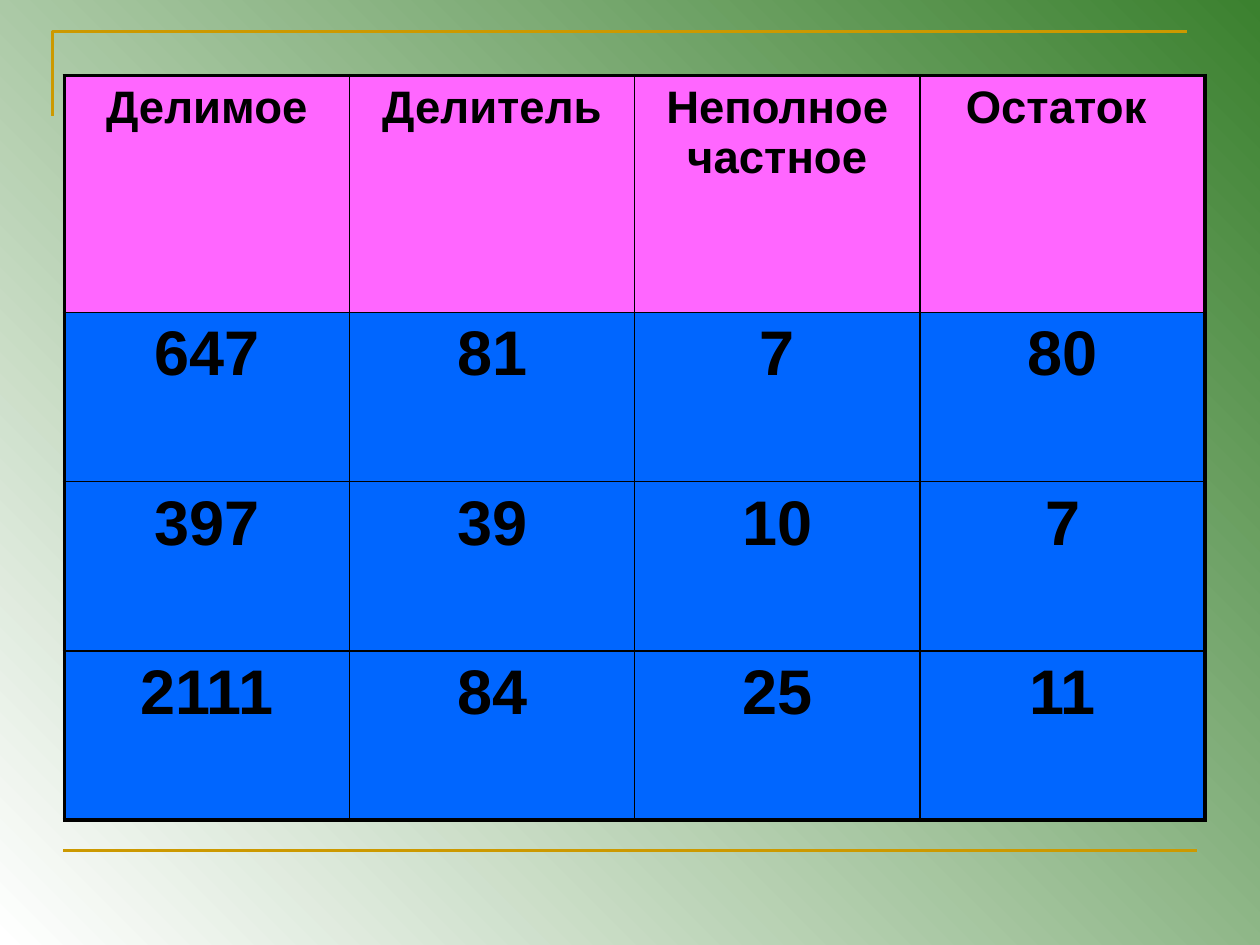
import pptx
import pptx.dml.color
import pptx.enum.shapes
import pptx.enum.text
import pptx.oxml
import pptx.oxml.ns
import pptx.util

Pt = pptx.util.Pt
RGB = pptx.dml.color.RGBColor.from_string

# Content
HEADERS = ["Делимое", "Делитель", "Неполное частное", "Остаток "]
ROWS = [
    ["647", "81", "7", "80"],
    ["397", "39", "10", "7"],
    ["2111", "84", "25", "11"],
]

THEME = {
    "font": "Arial", "text": "000000",
    "header_size": 26, "body_size": 36,
    "header_fill": "FF66FF", "body_fill": "0066FF",
    "border": "000000", "outer": 2.25, "inner": 1,
    "accent": "CC9900", "accent_width": 1.5,
    "background": ("FFFFFF", "3B812F"),
}

# Layout in points
SLIDE_W, SLIDE_H = 720, 540
TABLE_X, TABLE_Y = 36.7, 43.2
COL_W, HEADER_H, BODY_H = 163, 135.4, 96.7
CORNER = [(30.2, 66.2), (30.2, 18), (678.2, 18)]
RULE_X, RULE_W, RULE_Y = 36, 648, 486


def style_line(sp):
    sp.line.color.rgb = RGB(THEME["accent"])
    sp.line.width = Pt(THEME["accent_width"])


def add_borders(cell, widths):
    tc_pr = cell._tc.get_or_add_tcPr()
    for side, width in widths.items():
        tc_pr.append(pptx.oxml.parse_xml(
            f'<a:ln{side} {pptx.oxml.ns.nsdecls("a")} w="{int(Pt(width))}">'
            f'<a:solidFill><a:srgbClr val="{THEME["border"]}"/></a:solidFill>'
            f'</a:ln{side}>'))


def fill_cell(cell, text, size, fill):
    cell.fill.solid()
    cell.fill.fore_color.rgb = RGB(fill)
    cell.text = text
    p = cell.text_frame.paragraphs[0]
    p.alignment = pptx.enum.text.PP_ALIGN.CENTER
    p.font.name = THEME["font"]
    p.font.size = Pt(size)
    p.font.bold = True
    p.font.color.rgb = RGB(THEME["text"])


prs = pptx.Presentation()
prs.slide_width, prs.slide_height = Pt(SLIDE_W), Pt(SLIDE_H)
s = prs.slides.add_slide(prs.slide_layouts[6])

# Background gradient, bottom left to top right
bg = s.background.fill
bg.gradient()
bg.gradient_angle = 45
for i, (stop, color) in enumerate(zip(bg.gradient_stops, THEME["background"])):
    stop.color.rgb = RGB(color)
    stop.position = i

# Corner line at the top
builder = s.shapes.build_freeform(Pt(CORNER[0][0]), Pt(CORNER[0][1]))
builder.add_line_segments([(Pt(x), Pt(y)) for x, y in CORNER[1:]], close=False)
sp = builder.convert_to_shape()
sp.shadow.inherit = False
sp.fill.background()
style_line(sp)

# Rule at the bottom
sp = s.shapes.add_connector(
    pptx.enum.shapes.MSO_CONNECTOR.STRAIGHT,
    Pt(RULE_X), Pt(RULE_Y), Pt(RULE_X + RULE_W), Pt(RULE_Y))
sp._element.spPr.append(
    pptx.oxml.parse_xml(f'<a:effectLst {pptx.oxml.ns.nsdecls("a")}/>'))
style_line(sp)

# Division table
grid = [HEADERS] + ROWS
heights = [HEADER_H] + [BODY_H] * len(ROWS)
last_row, last_col = len(grid) - 1, len(HEADERS) - 1
table = s.shapes.add_table(
    len(grid), len(HEADERS), Pt(TABLE_X), Pt(TABLE_Y),
    Pt(COL_W * len(HEADERS)), Pt(sum(heights))).table
for col in table.columns:
    col.width = Pt(COL_W)
for r, (values, height) in enumerate(zip(grid, heights)):
    table.rows[r].height = Pt(height)
    kind = "body" if r else "header"
    for c, text in enumerate(values):
        cell = table.cell(r, c)
        on_edge = {"L": c == 0, "R": c == last_col, "T": r == 0, "B": r == last_row}
        add_borders(cell, {side: THEME["outer" if edge else "inner"]
                           for side, edge in on_edge.items()})
        fill_cell(cell, text, THEME[kind + "_size"], THEME[kind + "_fill"])

prs.save("out.pptx")
